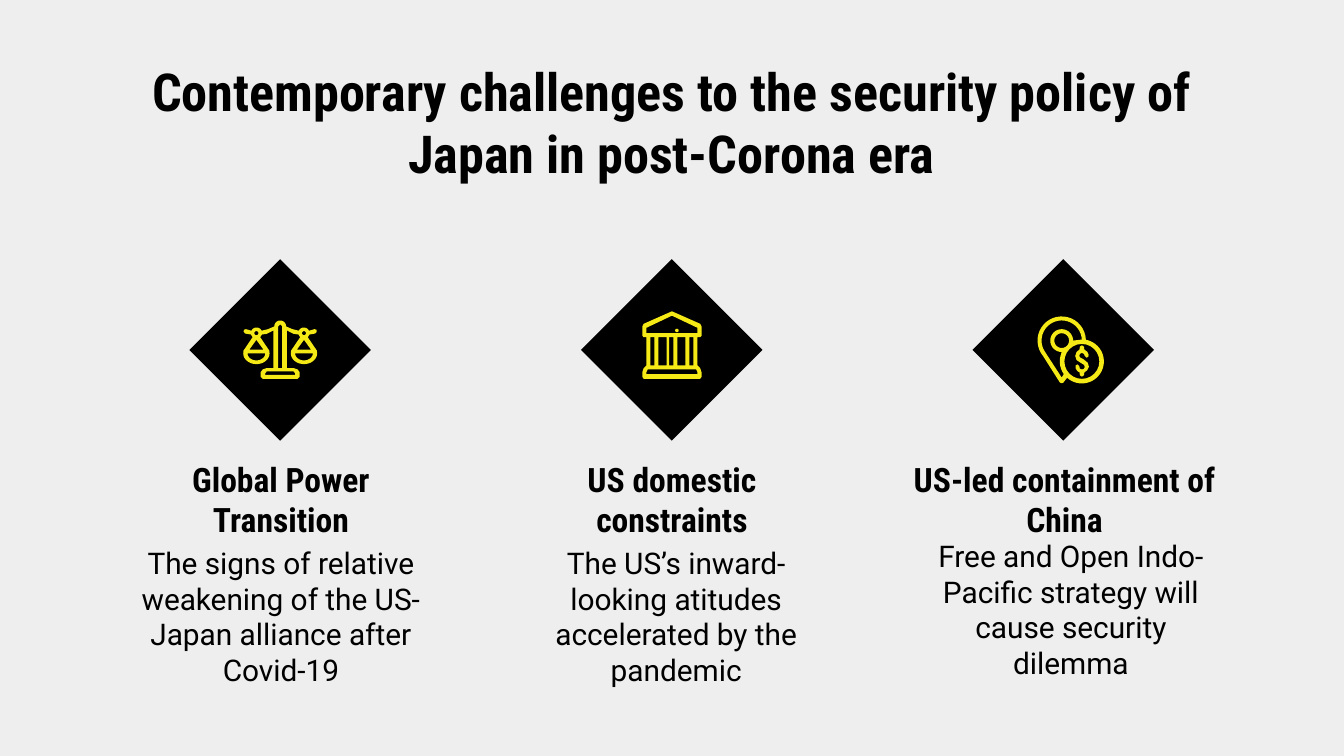
from math import cos, radians, sin

from pptx import Presentation
from pptx.dml.color import RGBColor
from pptx.enum.shapes import MSO_SHAPE
from pptx.enum.text import MSO_ANCHOR, MSO_AUTO_SIZE, PP_ALIGN
from pptx.util import Cm, Pt

BLACK, YELLOW, GREY = "000000", "F5EA15", "EFEEEF"
color = RGBColor.from_string


def write(box, text, font, size, bold=False):
    frame = box.text_frame
    frame.word_wrap = True
    frame.auto_size = MSO_AUTO_SIZE.NONE
    frame.vertical_anchor = MSO_ANCHOR.MIDDLE
    frame.margin_left = frame.margin_right = Cm(0.25)
    frame.margin_top = frame.margin_bottom = Cm(0.25)
    para = frame.paragraphs[0]
    para.alignment = PP_ALIGN.CENTER
    run = para.add_run()
    run.text = text
    run.font.name = font
    run.font.size = Pt(size)
    run.font.bold = bold
    run.font.color.rgb = color(BLACK)


def arc(x, y, r, start=0, end=360, flat=1):
    """Points along an arc, in degrees; flat squeezes its height."""
    turns = [radians(start + (end - start) * i / 24) for i in range(25)]
    return [(x + r * cos(t), y + r * flat * sin(t)) for t in turns]


prs = Presentation()
prs.slide_width, prs.slide_height = Cm(25.4), Cm(14.29)
slide = prs.slides.add_slide(prs.slide_layouts[5])
slide.background.fill.solid()
slide.background.fill.fore_color.rgb = color(GREY)

title = slide.shapes.title
title.left, title.top, title.width, title.height = Cm(1.98), Cm(1.5), Cm(21.41), Cm(1.6)
write(title, "Contemporary challenges to the security policy of "
      "Japan in post-Corona era", "Roboto Condensed", 28, True)

# Columns: heading left, body left, body top, heading, body
columns = [
    (2.11, 2.11, 10.26, "Global Power Transition",
     "The signs of relative weakening of the US-Japan alliance after Covid-19"),
    (9.5, 9.58, 10.26, "US domestic constraints",
     "The US’s inward-looking atitudes accelerated by the pandemic"),
    (16.92, 17.04, 10.13, "US-led containment of China",
     "Free and Open Indo-Pacific strategy will cause security dilemma"),
]
for i, (left, side, top, head, body) in enumerate(columns):
    box = slide.shapes.add_textbox(Cm(left), Cm(9.09), Cm(6.4), Cm(0.69))
    write(box, head, "Roboto Condensed", 18, True)
    box = slide.shapes.add_textbox(Cm(side), Cm(top), Cm(6.4), Cm(2.77))
    write(box, body, "Roboto", 16)
    gem = slide.shapes.add_shape(
        MSO_SHAPE.DIAMOND, Cm(3.58 + 7.4 * i), Cm(4.9), Cm(3.43), Cm(3.43))
    gem.shadow.inherit = False
    gem.fill.solid()
    gem.fill.fore_color.rgb = color(BLACK)
    gem.line.fill.background()

# Icons are loops of points in units of 0.0254 cm; inner loops cut holes.
# Scales and bank are given as right halves around their middle axis.
scale_half = (
    arc(0, 243, 4.4, -90, 0) + [(9, 245), (13, 246)]
    + arc(17.6, 248, 4.2, 205, 335)
    + [(25.5, 245), (27, 245.5), (27.2, 247), (26, 248.3), (21.8, 249),
       (20.5, 251), (27.3, 261)]
    + arc(17.7, 263, 9.8, 0, 180, 0.82)
    + [(8.1, 261), (14.9, 251), (13.6, 249), (10, 248.5), (5, 246), (5, 274),
       (10, 274), (13, 275), (14.5, 277), (14.5, 280.5), (13, 282)])
post_half = [(0, 241.5), (1.5, 243), (1.5, 274)]
foot_half = [(10, 276.5), (11.2, 278), (11.2, 279)]
bank_half = [(0, 231.7), (21, 241), (22, 243), (22, 250), (21, 251), (19, 251),
             (19, 272), (21, 274), (22, 277), (22, 280.5), (21, 282)]
roof_half = [(0, 235), (19, 244), (19, 248)]
step_half = [(18, 275), (19, 277), (19, 278.5)]

halves = {208.5: [scale_half, post_half, foot_half],
          500: [bank_half, roof_half, step_half]}
scales, bank = [
    [[(mid + x, y) for x, y in half] + [(mid - x, y) for x, y in half[::-1]]
     for half in group] for mid, group in halves.items()]

for sign in (1, -1):
    pan = 208.5 + sign * 17.7
    scales += [arc(pan, 248, 1.5), arc(pan, 263, 6.6, 0, 180, 0.8),
               [(pan, 253), (pan - 5.2, 260.2), (pan + 5.2, 260.2)]]
for left, right in [(484, 487), (490, 496), (498, 501), (504, 510), (513, 516)]:
    bank.append([(left, 251), (right, 251), (right, 272), (left, 272)])
dot = [arc(503.7, 246, 1.3)]

pin = [
    arc(805, 269, 16.4, -80, 132) + [(791, 285), (789.5, 285.2), (788.5, 284.5)]
    + arc(790, 253.5, 18, 140, 357),
    arc(805, 269, 13),
    arc(790, 253.5, 8.5, 0, -270) + arc(805, 269, 16.4, 200, 145)
    + [(790, 281)] + arc(790, 253.5, 15, 145, 357),
    arc(790, 253.5, 5.5),
]
dollar = [[
    (805, 257), (803.5, 258), (803.3, 260), (801, 262), (800, 265), (801, 268),
    (804, 270), (806.5, 271.5), (807.2, 273), (806.5, 274.5), (805, 275),
    (803.5, 274.4), (803, 272.5), (801.8, 271.2), (800.3, 272), (800.4, 274.2),
    (801.6, 276.2), (803.3, 277.2), (803.5, 279.3), (805, 280.3), (806.6, 279.2),
    (806.8, 277.2), (809, 275.5), (810.2, 273), (809.4, 270), (806.2, 267.4),
    (803.6, 266), (803, 264.8), (803.6, 263.3), (805, 262.7), (806.5, 263.4),
    (807.2, 265), (808.4, 266.2), (809.8, 265.6), (810, 264), (809, 261.8),
    (806.8, 260.2), (806.5, 258)]]

for loops in (scales, bank, dot, pin, dollar):
    loops = [[(Cm(x * 0.0254), Cm(y * 0.0254)) for x, y in loop] for loop in loops]
    pen = slide.shapes.build_freeform(*loops[0][0])
    for loop in loops:
        pen.move_to(*loop[0])
        pen.add_line_segments(loop[1:], close=True)
    icon = pen.convert_to_shape()
    icon.shadow.inherit = False
    icon.fill.solid()
    icon.fill.fore_color.rgb = color(YELLOW)
    icon.line.fill.background()

prs.save("out.pptx")
